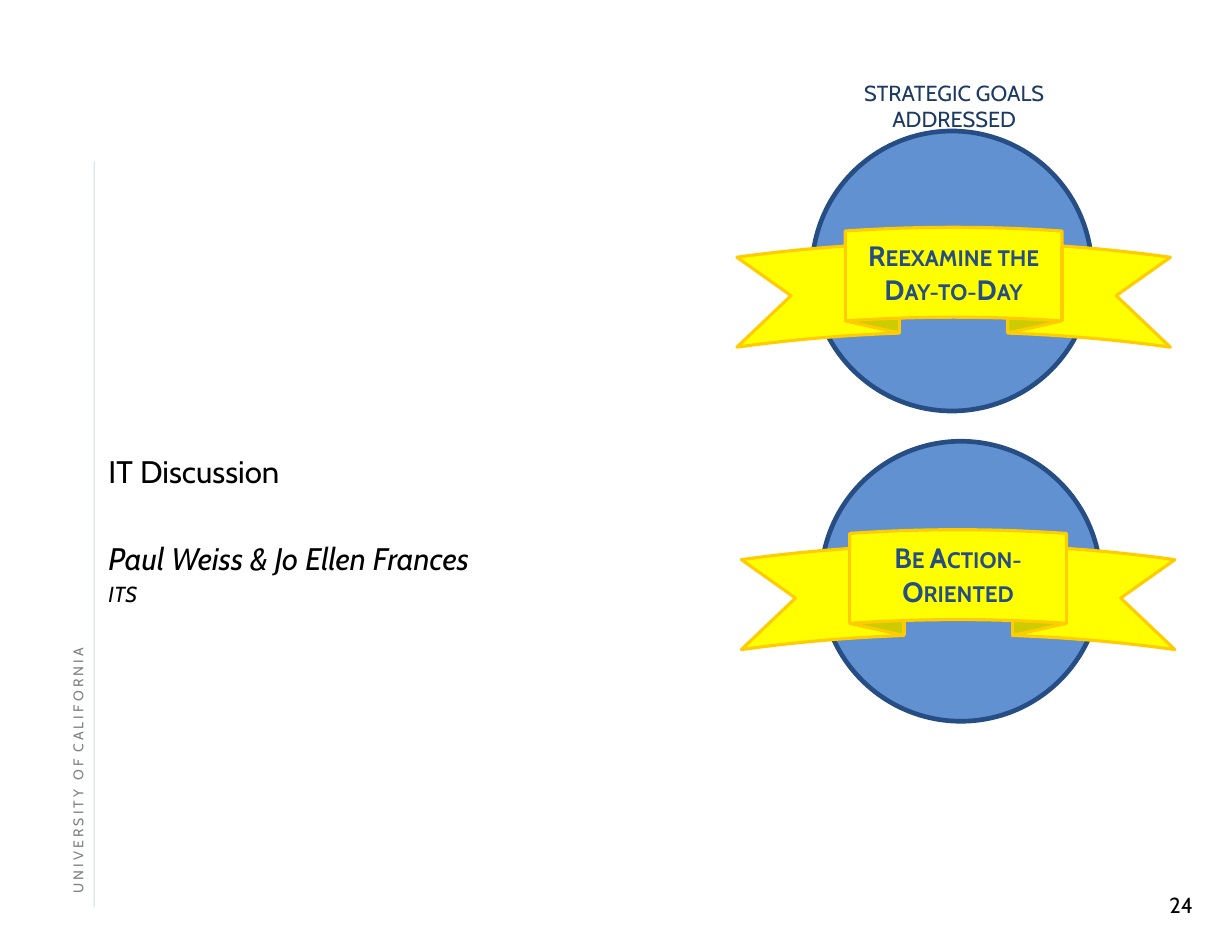
from pptx import Presentation
from pptx.dml.color import RGBColor
from pptx.enum.shapes import MSO_CONNECTOR, MSO_SHAPE
from pptx.enum.text import MSO_ANCHOR, PP_ALIGN
from pptx.oxml.ns import qn
from pptx.util import Inches, Pt
from lxml import etree

BLACK = RGBColor(0x00, 0x00, 0x00)
GRAY = RGBColor(0x80, 0x80, 0x80)
NAVY = RGBColor(0x26, 0x4E, 0x84)
DARK_NAVY = RGBColor(0x1D, 0x3A, 0x63)
BLUE = RGBColor(0x61, 0x91, 0xD1)
YELLOW = RGBColor(0xFF, 0xFF, 0x00)
GOLD = RGBColor(0xFF, 0xCC, 0x00)

FONT = "Cabin"
# Each line: runs, font format, space before in points
TITLE_LINES = [
    (["IT Discussion"], {"size": Pt(20)}, 0),
    (["Paul Weiss & Jo Ellen Frances"], {"size": Pt(20), "italic": True}, 32),
    (["ITS"], {"size": Pt(14), "italic": True}, 2.5),
]
SIDE_RUNS = ["U N I V E R S I T Y", " ", "O F", " ", "C A L I F O R N I A"]
SIDE_GAPS = {1: 400, 3: 200}  # run index: extra width in hundredths of a point
GOALS = [  # label, circle corner, ribbon corner
    ("Reexamine the Day-to-Day", (7.25, 1.17), (6.58, 2.03)),
    ("Be Action-Oriented", (7.33, 3.94), (6.62, 4.73)),
]
CIRCLE_SIZE = (2.5, 2.5)
RIBBON_SIZE = (3.87, 1.07)
LABEL_SIZE = (2, 0.71)
LABEL_DROP = 0.05


def add_text(shapes, corner, size, lines, color, align=PP_ALIGN.LEFT, wrap=True, **frame_format):
    box = shapes.add_textbox(*map(Inches, corner + size))
    frame = box.text_frame
    frame.word_wrap = wrap
    for name, value in frame_format.items():
        setattr(frame, name, value)
    for index, (texts, font_format, gap) in enumerate(lines):
        para = frame.paragraphs[0] if index == 0 else frame.add_paragraph()
        para.alignment = align
        if gap:
            para.space_before = Pt(gap)
        for text in texts:
            span = para.add_run()
            span.text = text
            span.font.name = FONT
            span.font.color.rgb = color
            for name, value in font_format.items():
                setattr(span.font, name, value)
    return box


def add_filled(shapes, kind, corner, size, fill, line, width):
    shape = shapes.add_shape(kind, *map(Inches, corner + size))
    shape.shadow.inherit = False
    shape.fill.solid()
    shape.fill.fore_color.rgb = fill
    shape.line.color.rgb = line
    shape.line.width = Pt(width)


def add_goal(page, label, circle_corner, ribbon_corner):
    add_filled(page.shapes, MSO_SHAPE.OVAL, circle_corner, CIRCLE_SIZE, BLUE, NAVY, 3)
    banner = page.shapes.add_group_shape()
    add_filled(banner.shapes, MSO_SHAPE.CURVED_UP_RIBBON, ribbon_corner, RIBBON_SIZE,
               YELLOW, GOLD, 2)
    left, top = ribbon_corner
    label_corner = (left + (RIBBON_SIZE[0] - LABEL_SIZE[0]) / 2, top + LABEL_DROP)
    box = add_text(banner.shapes, label_corner, LABEL_SIZE,
                   [([label], {"size": Pt(18), "bold": True}, 0)], NAVY, PP_ALIGN.CENTER)
    box.text_frame.paragraphs[0].runs[0].font._element.set("cap", "small")


def add_rule(page):
    rule = page.shapes.add_connector(MSO_CONNECTOR.STRAIGHT,
                                     *map(Inches, (0.84, 1.44, 0.84, 8.1)))
    rule.line.color.rgb = NAVY
    rule.line.width = Pt(0.35)
    properties = rule._element.spPr
    color = properties.find(".//" + qn("a:srgbClr"))
    etree.SubElement(color, qn("a:alpha"), val="40000")
    etree.SubElement(properties, qn("a:effectLst"))


def add_side_text(page):
    side = add_text(page.shapes, (-1.47, 5.74), (4.33, 0.15),
                    [(SIDE_RUNS, {"size": Pt(9)}, 0)], GRAY, wrap=False,
                    vertical_anchor=MSO_ANCHOR.BOTTOM, margin_left=0, margin_right=0,
                    margin_top=0, margin_bottom=0)
    side.rotation = 270
    para = side.text_frame.paragraphs[0]
    para.line_spacing = Pt(12)
    for index, extra in SIDE_GAPS.items():
        para.runs[index].font._element.set("spc", str(extra))


def main():
    deck = Presentation()
    deck.slide_width, deck.slide_height = Inches(11), Inches(8.5)
    page = deck.slides.add_slide(deck.slide_layouts[6])
    shapes = page.shapes

    add_rule(page)
    add_text(shapes, (10.25, 7.91), (0.5, 0.33), [(["24"], {"size": Pt(14)}, 0)],
             BLACK, PP_ALIGN.RIGHT)
    add_side_text(page)
    add_text(shapes, (0.87, 3.6), (9.35, 1.86), TITLE_LINES, BLACK,
             vertical_anchor=MSO_ANCHOR.BOTTOM, margin_left=Inches(0.1),
             margin_right=Inches(0.04), margin_top=Inches(0.04), margin_bottom=Inches(0.04))
    for goal in GOALS:
        add_goal(page, *goal)
    add_text(shapes, (7.22, 0.66), (2.6, 0.34),
             [(["STRATEGIC GOALS ADDRESSED"], {"size": Pt(14)}, 0)],
             DARK_NAVY, PP_ALIGN.CENTER)

    deck.save("out.pptx")


if __name__ == "__main__":
    main()
